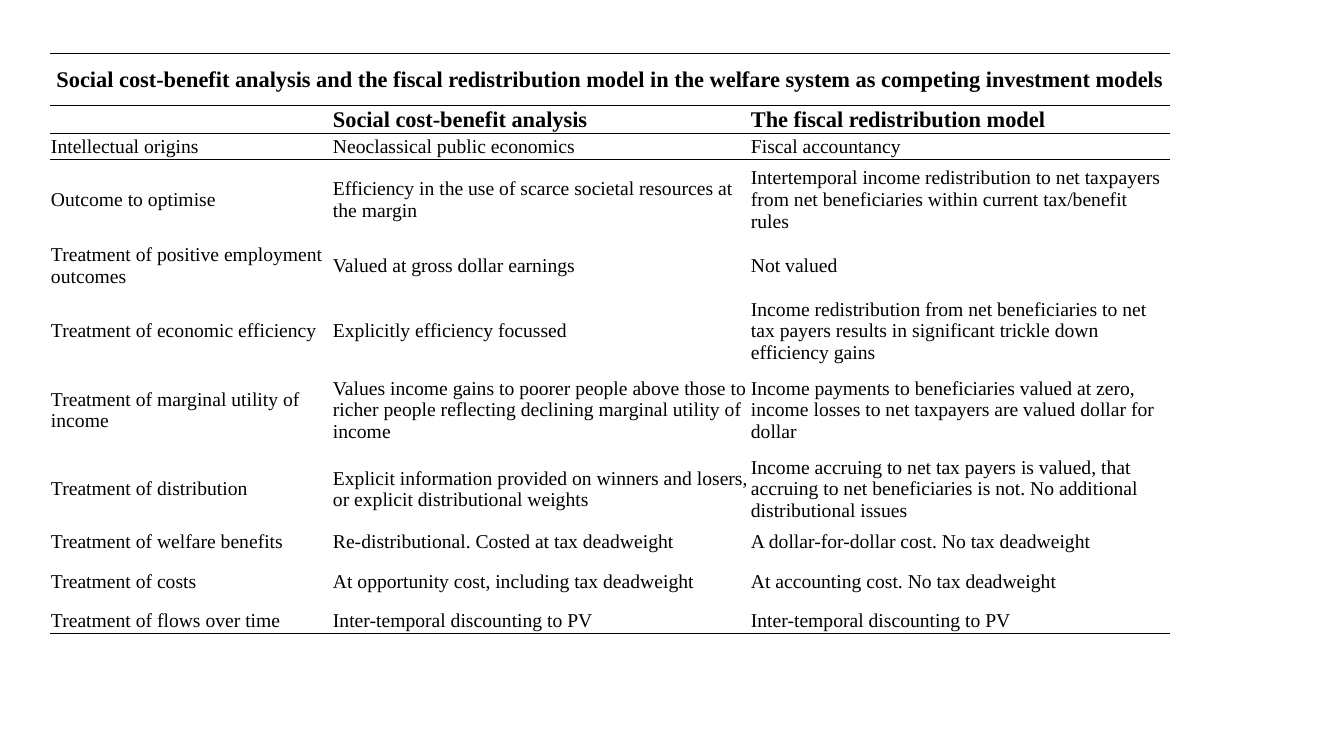
from dataclasses import dataclass

from lxml.etree import SubElement
from pptx import Presentation
from pptx.dml.color import RGBColor
from pptx.enum.text import MSO_ANCHOR as Anchor, PP_ALIGN as Align
from pptx.oxml.ns import qn
from pptx.table import Table, _Cell as Cell
from pptx.util import Pt

EMU_PER_PX = 914400 / 100.8
COLOURS = {"ink": "000000", "paper": "FFFFFF"}
FONT = "Times New Roman"
PLAIN_TABLE = "{2D5ABB26-0587-4C30-8999-92F81FD0307C}"
RULE_WIDTH = Pt(0.5)

COLUMN_WIDTHS = (282, 418, 420)
ROW_HEIGHTS = (25, 52, 27, 26, 80, 52, 79, 79, 79, 27, 52, 26, 25)
RULES_BELOW_ROWS = {0, 1, 2, 11}
HEADING_ROW = 1


@dataclass(frozen=True)
class TextStyle:
    size: int
    bold: bool
    align: Align


@dataclass(frozen=True)
class Comparison:
    aspect: str
    cost_benefit: str
    redistribution: str

    def texts(self) -> tuple[str, str, str]:
        return self.aspect, self.cost_benefit, self.redistribution


HEADING = TextStyle(16, True, Align.CENTER)
MODEL_NAME = TextStyle(16, True, Align.JUSTIFY)
BODY = TextStyle(14, False, Align.LEFT)

BLANK = Comparison("", "", "")
ROWS = (
    BLANK,
    Comparison(
        "Social cost-benefit analysis and the fiscal redistribution model "
        "in the welfare system as competing investment models", "", ""),
    Comparison("", "Social cost-benefit analysis",
               "The fiscal redistribution model"),
    Comparison("Intellectual origins", "Neoclassical public economics",
               "Fiscal accountancy"),
    Comparison(
        "Outcome to optimise",
        "Efficiency in the use of scarce societal resources at the margin",
        "Intertemporal income redistribution to net taxpayers from net "
        "beneficiaries within current tax/benefit rules"),
    Comparison("Treatment of positive employment outcomes",
               "Valued at gross dollar earnings", "Not valued"),
    Comparison(
        "Treatment of economic efficiency",
        "Explicitly efficiency focussed",
        "Income redistribution from net beneficiaries to net tax payers "
        "results in significant trickle down efficiency gains"),
    Comparison(
        "Treatment of marginal utility of income",
        "Values income gains to poorer people above those to richer people "
        "reflecting declining marginal utility of income",
        "Income payments to beneficiaries valued at zero, income losses to "
        "net taxpayers are valued dollar for dollar"),
    Comparison(
        "Treatment of distribution",
        "Explicit information provided on winners and losers, or explicit "
        "distributional weights",
        "Income accruing to net tax payers is valued, that accruing to net "
        "beneficiaries is not. No additional distributional issues"),
    Comparison("Treatment of welfare benefits",
               "Re-distributional. Costed at tax deadweight",
               "A dollar-for-dollar cost. No tax deadweight"),
    Comparison("Treatment of costs",
               "At opportunity cost, including tax deadweight",
               "At accounting cost. No tax deadweight"),
    Comparison("Treatment of flows over time",
               "Inter-temporal discounting to PV",
               "Inter-temporal discounting to PV"),
    BLANK,
)
ROW_STYLES = {HEADING_ROW: HEADING, HEADING_ROW + 1: MODEL_NAME}


def px(length: int) -> int:
    return round(length * EMU_PER_PX)


def draw_rule(cell: Cell, side: str) -> None:
    rule = SubElement(cell._tc.get_or_add_tcPr(), qn(f"a:{side}"),
                      w=str(RULE_WIDTH))
    SubElement(SubElement(rule, qn("a:solidFill")), qn("a:srgbClr"),
               val=COLOURS["ink"])


def write_text(cell: Cell, text: str, style: TextStyle) -> None:
    cell.margin_left = cell.margin_right = cell.margin_top = px(1)
    cell.margin_bottom = 0
    cell.vertical_anchor = Anchor.MIDDLE
    paragraph = cell.text_frame.paragraphs[0]
    paragraph.alignment = style.align
    if not text:
        paragraph._p.get_or_add_endParaRPr().set("sz", str(style.size * 100))
        return
    run = paragraph.add_run()
    run.text = text
    run.font.name = FONT
    run.font.size = Pt(style.size)
    run.font.bold = style.bold
    run.font.color.rgb = RGBColor.from_string(COLOURS["ink"])


def fill_row(table: Table, row: int, comparison: Comparison) -> None:
    style = ROW_STYLES.get(row, BODY)
    for column, text in enumerate(comparison.texts()):
        cell = table.cell(row, column)
        if row - 1 in RULES_BELOW_ROWS:
            draw_rule(cell, "lnT")
        if row in RULES_BELOW_ROWS:
            draw_rule(cell, "lnB")
        cell.fill.solid()
        cell.fill.fore_color.rgb = RGBColor.from_string(COLOURS["paper"])
        write_text(cell, text, style)


def main() -> None:
    deck = Presentation()
    deck.slide_width, deck.slide_height = px(1344), px(756)
    slide = deck.slides.add_slide(deck.slide_layouts[6])
    table = slide.shapes.add_table(
        len(ROWS), len(COLUMN_WIDTHS), px(50), px(28),
        px(sum(COLUMN_WIDTHS)), px(sum(ROW_HEIGHTS))).table
    table.first_row = table.horz_banding = False
    table._tbl.tblPr.find(qn("a:tableStyleId")).text = PLAIN_TABLE
    for column, width in zip(table.columns, COLUMN_WIDTHS):
        column.width = px(width)
    for row, height in zip(table.rows, ROW_HEIGHTS):
        row.height = px(height)
    for index, comparison in enumerate(ROWS):
        fill_row(table, index, comparison)
    table.cell(HEADING_ROW, 0).merge(
        table.cell(HEADING_ROW, len(COLUMN_WIDTHS) - 1))
    deck.save("out.pptx")


if __name__ == "__main__":
    main()
